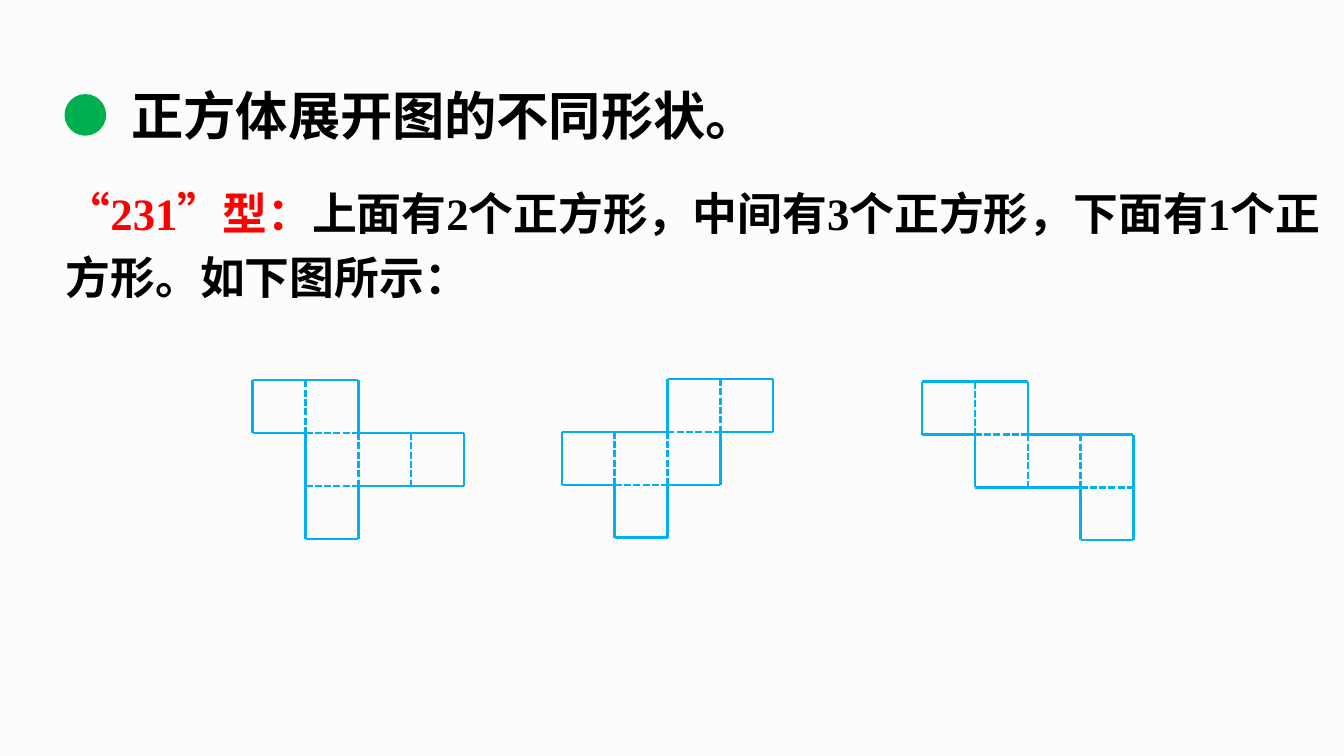
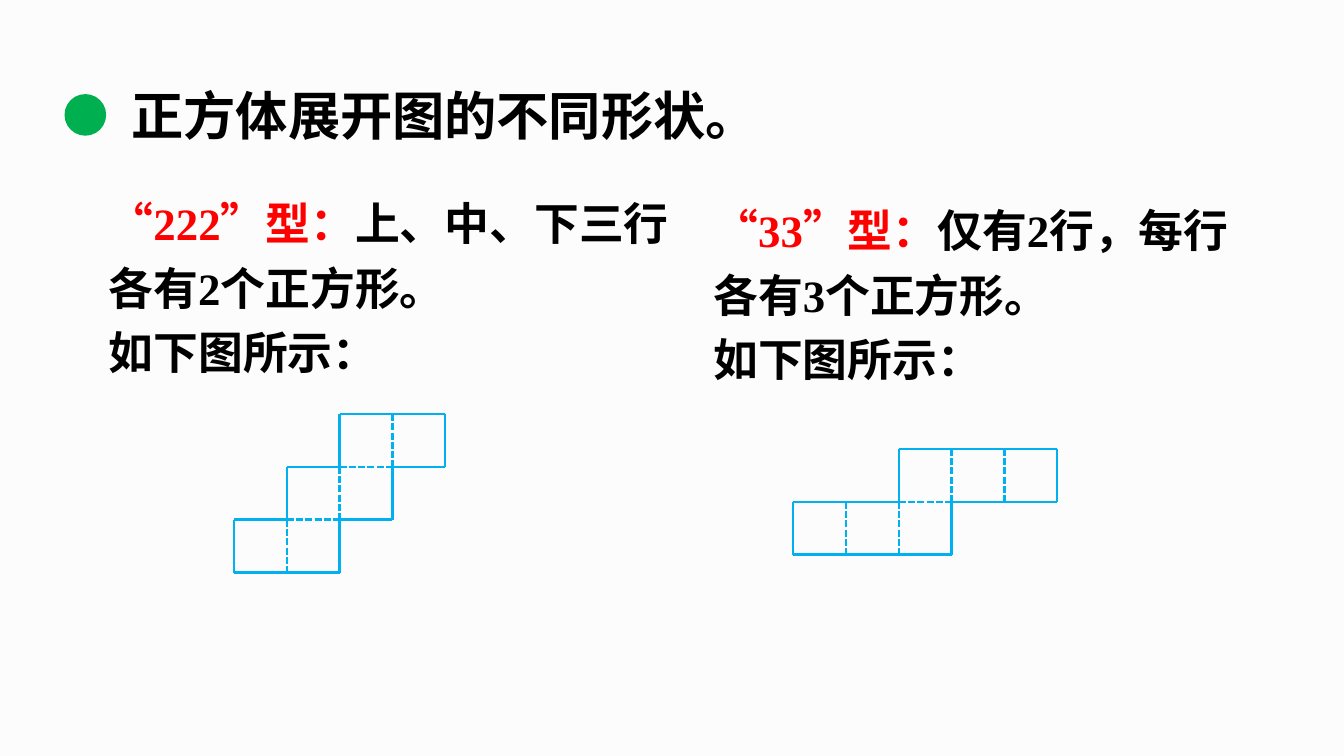
import collections
import dataclasses

import pptx
import pptx.dml.color
import pptx.enum.dml
import pptx.enum.lang
import pptx.enum.shapes
import pptx.enum.text
import pptx.oxml
import pptx.oxml.ns
import pptx.util
from pptx.util import Inches

RGBColor = pptx.dml.color.RGBColor
BLACK = RGBColor(0x00, 0x00, 0x00)
RED = RGBColor(0xFF, 0x00, 0x00)
GREEN = RGBColor(0x00, 0xB0, 0x50)
SKY = RGBColor(0x00, 0xB0, 0xF0)
PALE = RGBColor(0xF2, 0xF2, 0xF2)

SANS = "Noto Sans CJK SC"
SERIF = "Times New Roman"
TITLE = "正方体展开图的不同形状。"
PAGE_WIDTH = Inches(10)
PAGE_HEIGHT = PAGE_WIDTH * 9 // 16
CELL = Inches(1.18) // 3


@dataclasses.dataclass(frozen=True)
class Caption:
    left: float
    top: float
    width: float
    height: float
    label: str
    body: str
    closing: str = ""


@dataclasses.dataclass(frozen=True)
class Net:
    left: float
    top: float
    rows: tuple[str, ...]
    long_edge: tuple[int, int] | None = None


@dataclasses.dataclass(frozen=True)
class Lesson:
    captions: tuple[Caption, ...]
    nets: tuple[Net, ...]


LESSONS = (
    Lesson(
        captions=(
            Caption(0.39, 1.25, 9.53, 1.07, "“231”型：",
                    "上面有2个正方形，中间有3个正方形，下面有1个正方形。如下图所示："),
        ),
        nets=(
            Net(6.86, 2.84, ("##..", ".###", "...#"), long_edge=(1, 2)),
            Net(4.18, 2.82, ("..##", "###.", ".#..")),
            Net(1.88, 2.83, ("##..", ".###", ".#..")),
        ),
    ),
    Lesson(
        captions=(
            Caption(0.71, 1.33, 4.41, 1.56, "“222”型：",
                    "上、中、下三行各有2个正方形。", "如下图所示："),
            Caption(5.21, 1.38, 4.13, 1.56, "“33”型：",
                    "仅有2行，每行各有3个正方形。", "如下图所示："),
        ),
        nets=(
            Net(5.9, 3.34, ("..###", "###.."), long_edge=(1, 2)),
            Net(1.74, 3.08, ("..##", ".##.", "##..")),
        ),
    ),
)


def format_span(span, size: int, font_name: str, color: RGBColor) -> None:
    font = span.font
    font.size = pptx.util.Pt(size)
    font.bold = True
    font.name = font_name
    font.color.rgb = color
    font.language_id = pptx.enum.lang.MSO_LANGUAGE_ID.SIMPLIFIED_CHINESE
    latin = span._r.rPr.find(pptx.oxml.ns.qn("a:latin"))
    east_asian = pptx.oxml.parse_xml(
        f'<a:ea {pptx.oxml.ns.nsdecls("a")} typeface="{SANS}"/>')
    latin.addnext(east_asian)


def add_text_box(page, left: float, top: float, width: float, height: float):
    box = page.shapes.add_textbox(
        Inches(left), Inches(top), Inches(width), Inches(height))
    box.text_frame.word_wrap = True
    box.text_frame.auto_size = pptx.enum.text.MSO_AUTO_SIZE.SHAPE_TO_FIT_TEXT
    return box


def set_background(page) -> None:
    fill = page.background.fill
    fill.solid()
    fill.fore_color.rgb = PALE
    color = page.background._cSld.find(".//" + pptx.oxml.ns.qn("a:srgbClr"))
    color.append(pptx.oxml.parse_xml(
        f'<a:alpha {pptx.oxml.ns.nsdecls("a")} val="22000"/>'))


def add_heading(page) -> None:
    dot = page.shapes.add_shape(
        pptx.enum.shapes.MSO_SHAPE.OVAL,
        Inches(0.48), Inches(0.7), Inches(0.31), Inches(0.31))
    dot.shadow.inherit = False
    dot.fill.solid()
    dot.fill.fore_color.rgb = GREEN
    dot.line.fill.background()
    box = add_text_box(page, 0.88, 0.57, 4.87, 0.57)
    box.text_frame.text = TITLE
    format_span(box.text_frame.paragraphs[0].runs[0], 28, SANS, BLACK)


def add_caption(page, caption: Caption) -> None:
    frame = add_text_box(page, caption.left, caption.top,
                         caption.width, caption.height).text_frame
    frame.text = caption.label
    first = frame.paragraphs[0]
    format_span(first.runs[0], 24, SERIF, RED)
    body = first.add_run()
    body.text = caption.body
    format_span(body, 24, SERIF, BLACK)
    if caption.closing:
        last = frame.add_paragraph()
        last.text = caption.closing
        format_span(last.runs[0], 24, SERIF, BLACK)
    for para in frame.paragraphs:
        para.line_spacing = 1.2


def count_edges(net: Net) -> collections.Counter:
    edges = collections.Counter()
    for y, row in enumerate(net.rows):
        for x, mark in enumerate(row):
            if mark == "#":
                edges.update((
                    (x, y, x + 1, y), (x, y + 1, x + 1, y + 1),
                    (x, y, x, y + 1), (x + 1, y, x + 1, y + 1)))
    if net.long_edge:
        x, y = net.long_edge
        del edges[x, y, x + 1, y]
        del edges[x + 1, y, x + 2, y]
        edges[x, y, x + 2, y] = 1
    return edges


def add_net(page, net: Net) -> None:
    group = page.shapes.add_group_shape()
    left, top = Inches(net.left), Inches(net.top)
    for (x1, y1, x2, y2), uses in count_edges(net).items():
        edge = group.shapes.add_connector(
            pptx.enum.shapes.MSO_CONNECTOR.STRAIGHT,
            left + x1 * CELL, top + y1 * CELL,
            left + x2 * CELL, top + y2 * CELL)
        edge.line.color.rgb = SKY
        edge.line.width = pptx.util.Pt(1.25)
        if uses == 2:
            edge.line.dash_style = pptx.enum.dml.MSO_LINE.SQUARE_DOT
        edge._element.spPr.append(pptx.oxml.parse_xml(
            f'<a:effectLst {pptx.oxml.ns.nsdecls("a")}/>'))


def add_lesson(deck, lesson: Lesson) -> None:
    page = deck.slides.add_slide(deck.slide_layouts[6])
    set_background(page)
    add_heading(page)
    for caption in lesson.captions:
        add_caption(page, caption)
    for net in lesson.nets:
        add_net(page, net)


def main() -> None:
    deck = pptx.Presentation()
    deck.slide_width = PAGE_WIDTH
    deck.slide_height = PAGE_HEIGHT
    for lesson in LESSONS:
        add_lesson(deck, lesson)
    deck.save("out.pptx")


if __name__ == "__main__":
    main()
